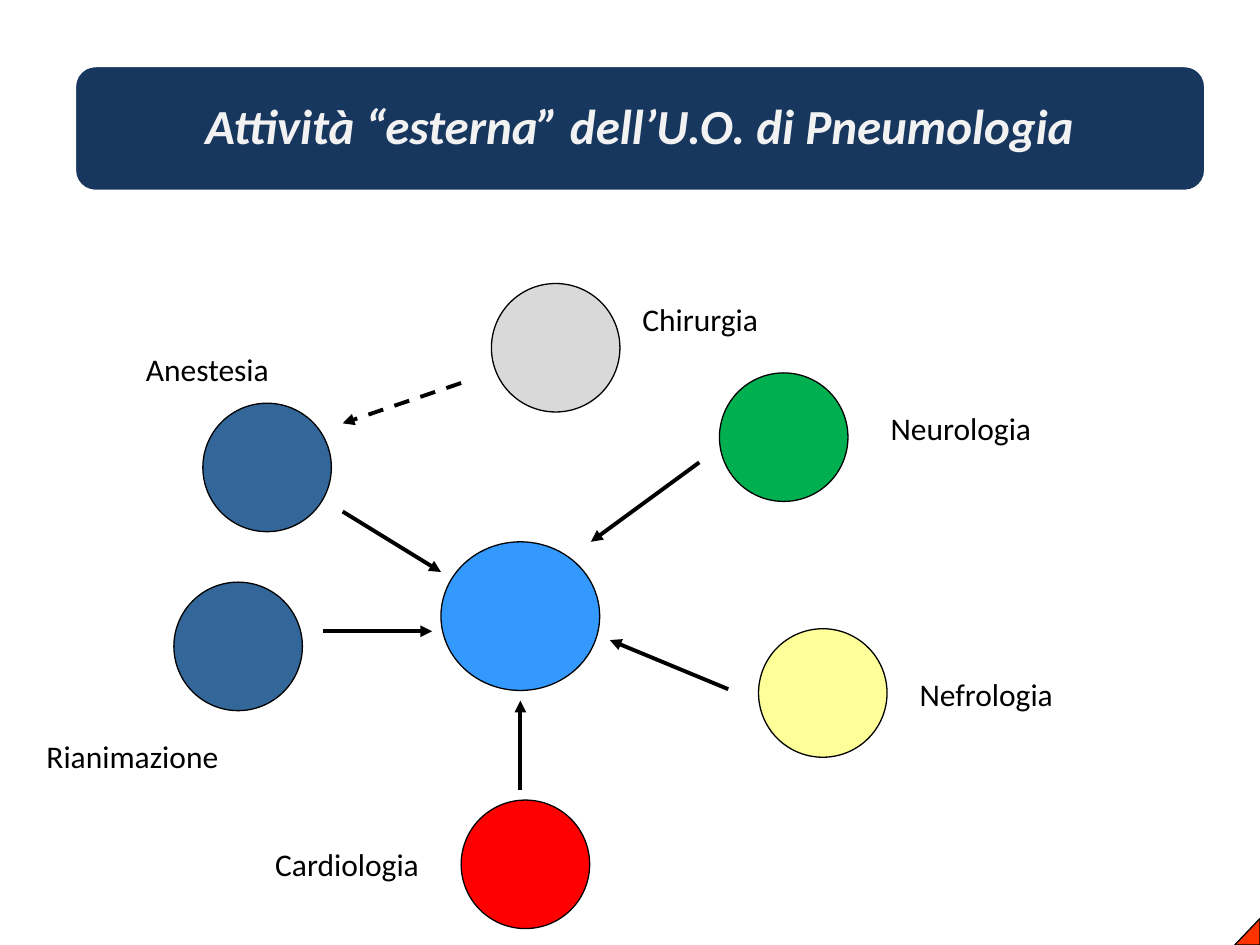
"""Build a slide of the hospital wards linked to the pneumology unit."""
from lxml import etree
from pptx import Presentation
from pptx.dml.color import RGBColor
from pptx.enum import dml, shapes, text
from pptx.oxml.ns import qn
from pptx.util import Inches, Pt

BLACK = RGBColor(0x00, 0x00, 0x00)
WHITE = RGBColor(0xFF, 0xFF, 0xFF)
PALE = RGBColor(0xF2, 0xF2, 0xF2)
NAVY = RGBColor(0x17, 0x37, 0x5E)
STEEL = RGBColor(0x33, 0x66, 0x99)
SKY = RGBColor(0x33, 0x99, 0xFF)
RED = RGBColor(0xFF, 0x00, 0x00)
GREEN = RGBColor(0x00, 0xB0, 0x50)
GREY = RGBColor(0xD9, 0xD9, 0xD9)
YELLOW = RGBColor(0xFF, 0xFF, 0x99)
ORANGE = RGBColor(0xFF, 0x33, 0x00)

COLS, ROWS = 100, 75
FONT = "Calibri"
TITLE = "Attività “esterna” dell’U.O. di Pneumologia"
BANNER = (5.9, 5.2, 89.8, 10)
TITLE_BOX = (6.8, 5.7, 87.9, 9)
HUB = (35, 43, 12.6, 11.8)
CORNER = (98, 72.9, 2, 2.1)
WARD_SIZE, LABEL_HEIGHT = 10.2, 4
LEFT, CENTER = text.PP_ALIGN.LEFT, text.PP_ALIGN.CENTER

# name, colour, circle corner, label corner, label width, label alignment
WARDS = [
    ("Rianimazione", STEEL, (13.8, 46.2), (2.7, 58), 18.1, LEFT),
    ("Anestesia", STEEL, (16.1, 32), (10.6, 27.3), 18.1, LEFT),
    ("Cardiologia", RED, (36.6, 63.5), (18.5, 66.6), 18.1, CENTER),
    ("Neurologia", GREEN, (57.1, 29.6), (69.7, 32), 18.1, LEFT),
    ("Chirurgia", GREY, (39, 22.5), (50, 23.3), 18.1, LEFT),
    ("Nefrologia", YELLOW, (60.2, 49.9), (72, 53.1), 15.7, LEFT),
]
# start, end, dashed
ARROWS = [
    ((36.6, 30.4), (27.2, 33.6), True),
    ((27.2, 40.6), (35, 45.4), False),
    ((55.5, 36.7), (46.9, 43), False),
    ((41.3, 62.7), (41.3, 55.6), False),
    ((25.6, 50.1), (34.3, 50.1), False),
    ((57.8, 54.7), (48.4, 50.8), False),
]

prs = Presentation()
prs.slide_width, prs.slide_height = Inches(10), Inches(7.5)
s = prs.slides.add_slide(prs.slide_layouts[5])


def grid(*values):
    """Turn alternating column and row values into slide lengths."""
    units = (prs.slide_width / COLS, prs.slide_height / ROWS)
    return [round(v * units[i % 2]) for i, v in enumerate(values)]


def add_shape(kind, box, fill, line=BLACK, weight=0.75):
    """Add a flat, outlined shape."""
    sp = s.shapes.add_shape(kind, *grid(*box))
    sp.shadow.inherit = False
    sp.fill.solid()
    sp.fill.fore_color.rgb = fill
    sp.line.color.rgb = line
    sp.line.width = Pt(weight)
    return sp


def write(sp, content, size, color, align, bold=False, italic=False):
    """Put one formatted paragraph in a shape."""
    sp.text_frame.text = content
    p = sp.text_frame.paragraphs[0]
    p.alignment = align
    font = p.runs[0].font
    font.name, font.size, font.bold, font.italic = FONT, Pt(size), bold, italic
    font.color.rgb = color
    return p


def add_arrow(start, end, dashed):
    """Add a line with a triangular head at its end."""
    cx = s.shapes.add_connector(shapes.MSO_CONNECTOR.STRAIGHT, *grid(*start, *end))
    cx.line.color.rgb = BLACK
    cx.line.width = Pt(2.25)
    if dashed:
        cx.line.dash_style = dml.MSO_LINE.DASH
    sp_pr = cx._element.spPr
    etree.SubElement(sp_pr.find(qn("a:ln")), qn("a:tailEnd"), type="triangle")
    etree.SubElement(sp_pr, qn("a:effectLst"))


def add_label(name, corner, width, align):
    """Add a ward name."""
    tb = s.shapes.add_textbox(*grid(*corner, width, LABEL_HEIGHT))
    tb.text_frame.word_wrap = True
    tb.text_frame.auto_size = text.MSO_AUTO_SIZE.SHAPE_TO_FIT_TEXT
    write(tb, name, 18, BLACK, align)


def add_title():
    """Place the title in front of its banner."""
    banner = add_shape(shapes.MSO_SHAPE.ROUNDED_RECTANGLE, BANNER, NAVY, WHITE, 2)
    title = s.shapes.title
    banner._element.addnext(title._element)
    title.left, title.top, title.width, title.height = grid(*TITLE_BOX)
    tf = title.text_frame
    tf.auto_size = text.MSO_AUTO_SIZE.NONE
    tf.word_wrap = True
    tf.vertical_anchor = text.MSO_ANCHOR.MIDDLE
    tf.margin_left = tf.margin_right = Inches(0.18)
    tf.margin_top = tf.margin_bottom = 0
    p = write(title, TITLE, 28, PALE, CENTER, bold=True, italic=True)
    p.line_spacing = 0.9


add_title()
add_shape(shapes.MSO_SHAPE.OVAL, HUB, SKY)
for name, color, corner, label_corner, width, align in WARDS:
    add_shape(shapes.MSO_SHAPE.OVAL, (*corner, WARD_SIZE, WARD_SIZE), color)
    add_label(name, label_corner, width, align)
for arrow in ARROWS:
    add_arrow(*arrow)
triangle = add_shape(shapes.MSO_SHAPE.RIGHT_TRIANGLE, CORNER, ORANGE)
triangle._element.spPr.find(qn("a:xfrm")).set("flipH", "1")

prs.save("out.pptx")
